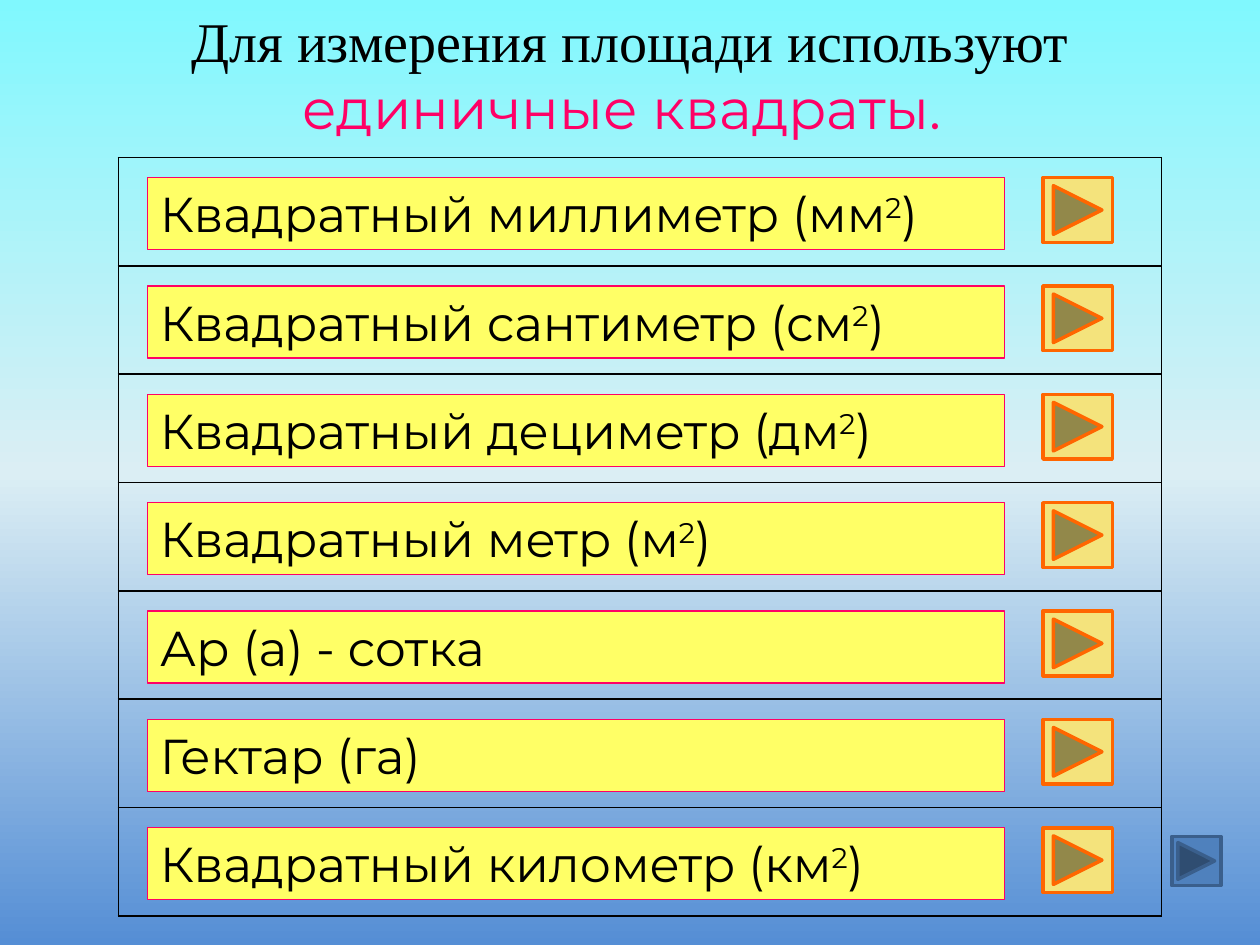
from copy import deepcopy

from lxml.etree import SubElement
from pptx import Presentation
from pptx.dml.color import RGBColor
from pptx.enum.shapes import MSO_SHAPE
from pptx.enum.text import MSO_ANCHOR, MSO_AUTO_SIZE, PP_ALIGN
from pptx.oxml.ns import qn
from pptx.util import Pt

COLORS = {
    "sky": "80F8FE", "haze": "DBEEF4", "deep": "558ED5",
    "text": "000000", "accent": "FF0066", "bar": "FFFF66",
    "button": "F4E37C", "button_line": "FF6600",
    "next": "4F81BD", "next_line": "3A5F8C",
}
UNITS = [
    ("Квадратный миллиметр (мм", "2", ")"),
    ("Квадратный сантиметр (см", "2", ")"),
    ("Квадратный дециметр (дм", "2", ")"),
    ("Квадратный метр (м", "2", ")"),
    ("Ар (а) - сотка",),
    ("Гектар (га)",),
    ("Квадратный километр (км", "2", ")"),
]
ROW_HEIGHT = 61.92
FIRST_BAR_TOP = 101.5


def color(name):
    return RGBColor.from_string(COLORS[name])


def set_background(slide):
    fill = slide.background.fill
    fill.gradient()
    fill.gradient_angle = 270
    stops = slide.element.find(".//" + qn("a:gsLst"))
    stops.append(deepcopy(stops[0]))
    for stop, position, name in zip(fill.gradient_stops, (0, 0.5, 1), ("sky", "haze", "deep")):
        stop.position = position
        stop.color.rgb = color(name)


def add_run(paragraph, text, size, font, color_name, superscript=False):
    run = paragraph.add_run()
    run.text = text
    run.font.size = Pt(size)
    run.font.name = font
    run.font.color.rgb = color(color_name)
    if superscript:
        run.font._element.set("baseline", "30000")


def add_title(slide):
    title = slide.shapes.add_textbox(Pt(62), Pt(0), Pt(596), Pt(85))
    frame = title.text_frame
    frame.word_wrap = True
    frame.auto_size = MSO_AUTO_SIZE.SHAPE_TO_FIT_TEXT
    paragraph = frame.paragraphs[0]
    paragraph.alignment = PP_ALIGN.CENTER
    add_run(paragraph, "Для измерения площади используют ", 32, "Times New Roman", "text")
    add_run(paragraph, "единичные квадраты. ", 32, "Montserrat", "accent")


def add_cell_borders(cell):
    properties = cell._tc.get_or_add_tcPr()
    for index, side in enumerate(("a:lnL", "a:lnR", "a:lnT", "a:lnB")):
        border = SubElement(properties, qn(side), w=str(Pt(1)))
        solid = SubElement(border, qn("a:solidFill"))
        SubElement(solid, qn("a:srgbClr"), val=COLORS["text"])
        properties.insert(index, border)  # borders precede the fill


def add_unit_grid(slide):
    grid = slide.shapes.add_table(
        len(UNITS), 1, Pt(67.6), Pt(90), Pt(596), Pt(ROW_HEIGHT * len(UNITS))).table
    grid.first_row = False
    grid.horz_banding = False
    for row in grid.rows:
        row.height = Pt(ROW_HEIGHT)
        cell = row.cells[0]
        cell.fill.background()
        add_cell_borders(cell)


def add_box(slide, preset, left, top, width, height, fill, line, line_width):
    box = slide.shapes.add_shape(preset, Pt(left), Pt(top), Pt(width), Pt(height))
    box.shadow.inherit = False
    box.fill.solid()
    box.fill.fore_color.rgb = color(fill)
    box.line.color.rgb = color(line)
    box.line.width = Pt(line_width)
    return box


def add_unit_bar(slide, top, parts):
    bar = add_box(slide, MSO_SHAPE.RECTANGLE, 84.3, top, 489.6, 41.2, "bar", "accent", 0.75)
    frame = bar.text_frame
    frame.word_wrap = True
    frame.auto_size = MSO_AUTO_SIZE.SHAPE_TO_FIT_TEXT
    frame.vertical_anchor = MSO_ANCHOR.TOP
    paragraph = frame.paragraphs[0]
    paragraph.alignment = PP_ALIGN.LEFT
    for part in parts:
        add_run(paragraph, part, 28, "Montserrat", "text", superscript=part == "2")


def add_forward_button(slide, left, top, width, height, fill, line):
    add_box(slide, MSO_SHAPE.ACTION_BUTTON_FORWARD_OR_NEXT,
            left, top, width, height, fill, line, 2)


def main():
    presentation = Presentation()
    presentation.slide_width = Pt(720)
    presentation.slide_height = Pt(540)
    slide = presentation.slides.add_slide(presentation.slide_layouts[6])
    set_background(slide)

    # Frame and heading
    add_unit_grid(slide)
    add_title(slide)

    # One bar and one button per unit of area
    for index, parts in enumerate(UNITS):
        top = FIRST_BAR_TOP + index * ROW_HEIGHT
        add_unit_bar(slide, top, parts)
        add_forward_button(slide, 596, top, 39.6, 37, "button", "button_line")

    # Button to the next slide
    add_forward_button(slide, 669.6, 478, 28, 28, "next", "next_line")
    presentation.save("out.pptx")


if __name__ == "__main__":
    main()
